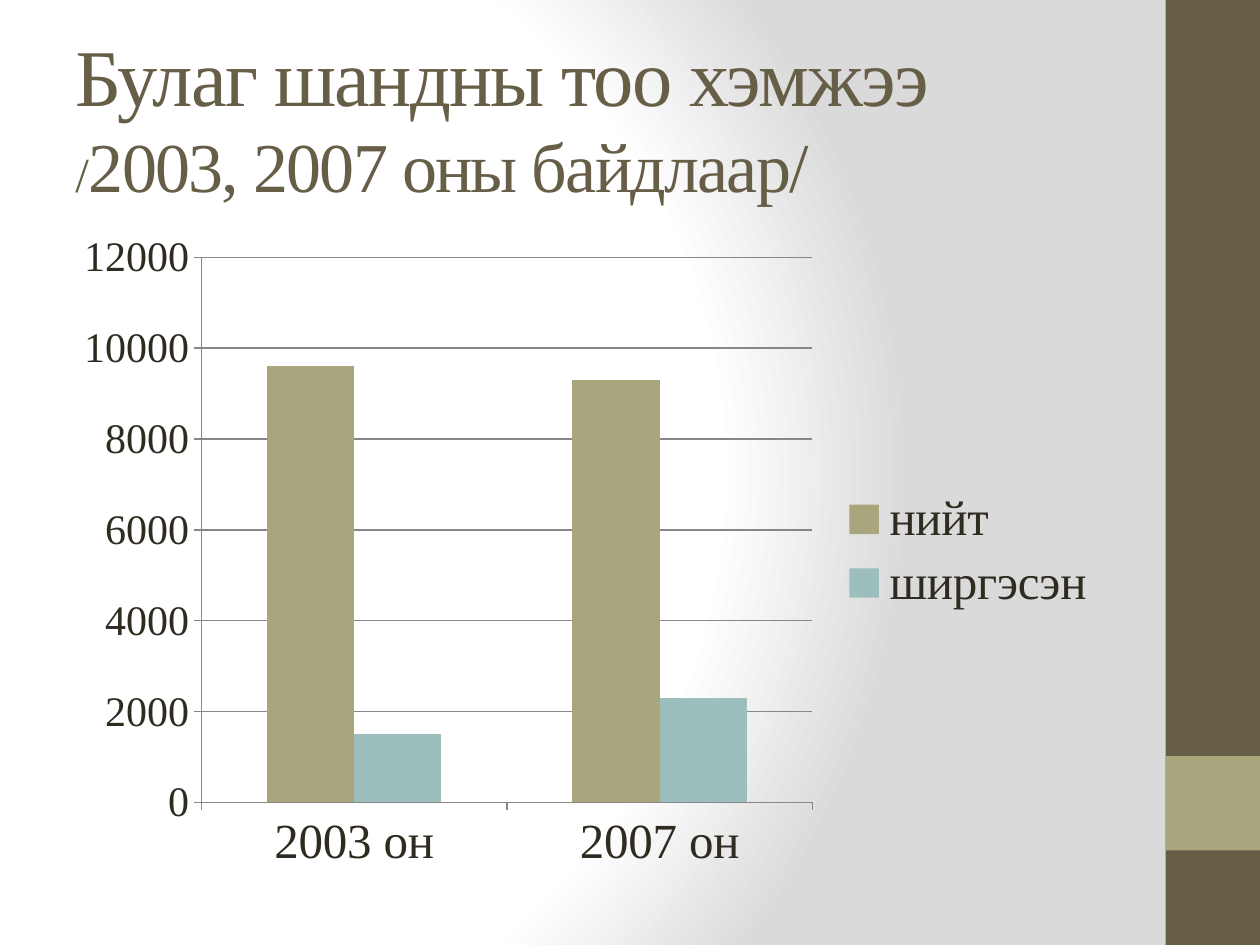
from pptx import Presentation
from pptx.chart.data import CategoryChartData
from pptx.dml.color import RGBColor
from pptx.enum.chart import XL_CHART_TYPE, XL_LEGEND_POSITION, XL_TICK_MARK
from pptx.enum.shapes import MSO_SHAPE
from pptx.enum.text import MSO_ANCHOR
from pptx.oxml import parse_xml
from pptx.oxml.ns import nsdecls, qn
from pptx.util import Pt


def rgb(value):
    return RGBColor.from_string(value)


def set_font(font, size, color):
    font.name = "Times New Roman"
    font.size = Pt(size)
    font.color.rgb = rgb(color)


BROWN, OLIVE, TEAL, INK, GRAY = "675E47", "A9A57C", "9CBEBD", "2F2B20", "878787"

prs = Presentation()
prs.slide_width, prs.slide_height = Pt(720), Pt(540)
s = prs.slides.add_slide(prs.slide_layouts[6])

stops = "".join(
    f'<a:gs pos="{pos * 1000}"><a:srgbClr val="{color}"/></a:gs>'
    for pos, color in [(0, "FFFFFF"), (75, "FFFFFF"), (100, "DADADA")]
)
bg = parse_xml(
    f'<p:bg {nsdecls("p", "a")}><p:bgPr><a:gradFill rotWithShape="1">'
    f'<a:gsLst>{stops}</a:gsLst><a:path path="circle">'
    '<a:fillToRect l="20000" t="50000" r="100000" b="50000"/></a:path>'
    '</a:gradFill><a:effectLst/></p:bgPr></p:bg>'
)
s.element.find(qn("p:cSld")).insert(0, bg)

for top, height, color in [(0, 540, BROWN), (432, 54, OLIVE)]:
    sp = s.shapes.add_shape(MSO_SHAPE.RECTANGLE, Pt(666), Pt(top), Pt(54), Pt(height))
    sp.shadow.inherit = False
    sp.fill.solid()
    sp.fill.fore_color.rgb = rgb(color)
    sp.line.fill.background()

tf = s.shapes.add_textbox(Pt(36), Pt(21.6), Pt(600), Pt(90)).text_frame
tf.word_wrap = True
tf.vertical_anchor = MSO_ANCHOR.MIDDLE
p = tf.paragraphs[0]
for text, size in [
    ("Булаг шандны тоо хэмжээ ", 46),
    ("/", 28),
    ("2003, 2007 оны байдлаар/", 40),
]:
    r = p.add_run()
    r.text = text
    set_font(r.font, size, BROWN)
    r.font._element.set("spc", "-100")

data = CategoryChartData()
data.categories = ["2003 он", "2007 он"]
data.add_series("нийт", [9600, 9300])
data.add_series("ширгэсэн", [1500, 2300])
chart = s.shapes.add_chart(
    XL_CHART_TYPE.COLUMN_CLUSTERED, Pt(36), Pt(126), Pt(600), Pt(378), data
).chart
chart.has_title = False
chart.font.name = "Calibri"
chart.font.size = Pt(10)
chart.font.color.rgb = rgb(INK)
chart.has_legend = True
chart.legend.position = XL_LEGEND_POSITION.RIGHT
chart.legend.include_in_layout = False
set_font(chart.legend.font, 28, INK)

plot = chart.plots[0]
plot.gap_width = 150
plot.overlap = 0
plot.vary_by_categories = False
for series, color in zip(plot.series, [OLIVE, TEAL]):
    series.format.fill.solid()
    series.format.fill.fore_color.rgb = rgb(color)

for axis, size in [(chart.category_axis, 28), (chart.value_axis, 24)]:
    axis.major_tick_mark = XL_TICK_MARK.OUTSIDE
    axis.format.line.color.rgb = rgb(GRAY)
    axis.format.line.width = Pt(0.75)
    set_font(axis.tick_labels.font, size, INK)
chart.value_axis.minimum_scale = 0
chart.value_axis.maximum_scale = 12000
chart.value_axis.major_unit = 2000
grid = chart.value_axis.major_gridlines.format.line
grid.color.rgb = rgb(GRAY)
grid.width = Pt(0.75)

prs.save("out.pptx")
